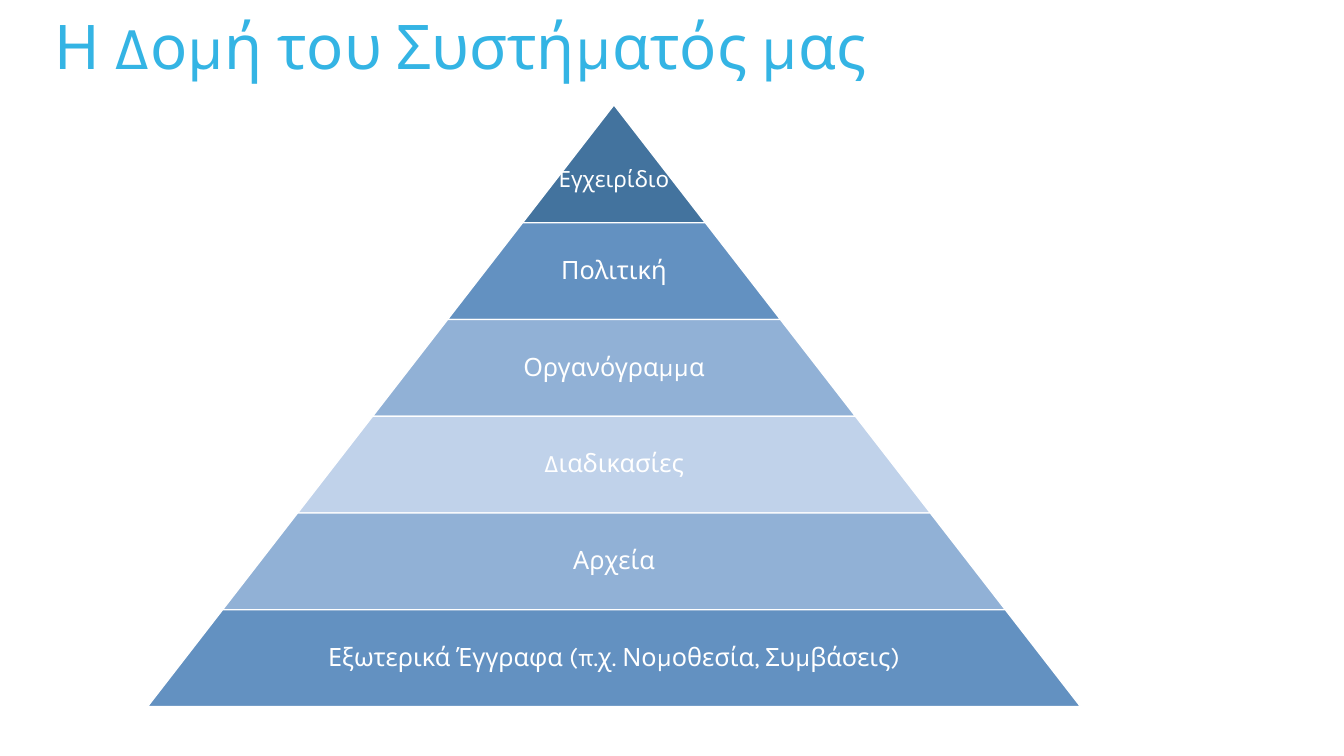
from pptx import Presentation
from pptx.dml.color import RGBColor
from pptx.enum.shapes import MSO_SHAPE
from pptx.enum.text import MSO_ANCHOR, MSO_AUTO_SIZE, PP_ALIGN
from pptx.util import Inches, Pt

TRAPEZOID = MSO_SHAPE.TRAPEZOID
MIDDLE = MSO_ANCHOR.MIDDLE
NO_AUTOFIT = MSO_AUTO_SIZE.NONE
LEFT, CENTER = PP_ALIGN.LEFT, PP_ALIGN.CENTER

FONT = "Karla"
TITLE = "Η Δομή του Συστήματός μας"
LEVELS = [
    ("Εγχειρίδιο", "43739E"),
    ("Πολιτική", "6391C1"),
    ("Οργανόγραμμα", "91B1D6"),
    ("Διαδικασίες", "C0D2EA"),
    ("Αρχεία", "91B1D6"),
    ("Εξωτερικά Έγγραφα (π.χ. Νομοθεσία, Συμβάσεις)", "6391C1"),
]

SLIDE_WIDTH, SLIDE_HEIGHT = 13.33, 7.5
CENTER_X, APEX_Y = 6.09, 1.04
TOP_HEIGHT, BAND_HEIGHT = 1.17, 0.96
SLOPE = 0.775
LABEL_SHARE = 0.65


def color(hex_value):
    return RGBColor.from_string(hex_value)


def write(text_frame, text, size, hex_value, alignment):
    text_frame.text = text
    text_frame.word_wrap = True
    text_frame.auto_size = NO_AUTOFIT
    text_frame.vertical_anchor = MIDDLE
    paragraph = text_frame.paragraphs[0]
    paragraph.alignment = alignment
    paragraph.line_spacing = 0.9
    font = paragraph.runs[0].font
    font.name, font.size = FONT, Pt(size)
    font.color.rgb = color(hex_value)


def centered_box(top, width, height):
    return [Inches(value) for value in (CENTER_X - width / 2, top, width, height)]


def add_level(slide, index, text, fill):
    is_top = index == 0
    height = TOP_HEIGHT if is_top else BAND_HEIGHT
    top = APEX_Y if is_top else APEX_Y + TOP_HEIGHT + (index - 1) * BAND_HEIGHT
    width = 2 * SLOPE * (top + height - APEX_Y)

    band = slide.shapes.add_shape(TRAPEZOID, *centered_box(top, width, height))
    band.adjustments[0] = SLOPE
    band.shadow.inherit = False
    band.fill.solid()
    band.fill.fore_color.rgb = color(fill)
    band.line.color.rgb = color("FFFFFF")
    band.line.width = Pt(1)

    label_width = width if is_top else width * LABEL_SHARE
    label = slide.shapes.add_textbox(*centered_box(top, label_width, height))
    frame = label.text_frame
    frame.margin_left = frame.margin_right = frame.margin_bottom = Inches(0.03)
    frame.margin_top = Inches(0.35 if is_top else 0.03)
    write(frame, text, 16 if is_top else 18, "FFFFFF", CENTER)


def main():
    presentation = Presentation()
    presentation.slide_width = Inches(SLIDE_WIDTH)
    presentation.slide_height = Inches(SLIDE_HEIGHT)
    slide = presentation.slides.add_slide(presentation.slide_layouts[5])

    title = slide.shapes.title
    title.left, title.top = Inches(0.44), Inches(0)
    title.width, title.height = Inches(12.44), Inches(0.98)
    write(title.text_frame, TITLE, 44, "34B4E4", LEFT)

    for index, (text, fill) in enumerate(LEVELS):
        add_level(slide, index, text, fill)

    presentation.save("out.pptx")


if __name__ == "__main__":
    main()
